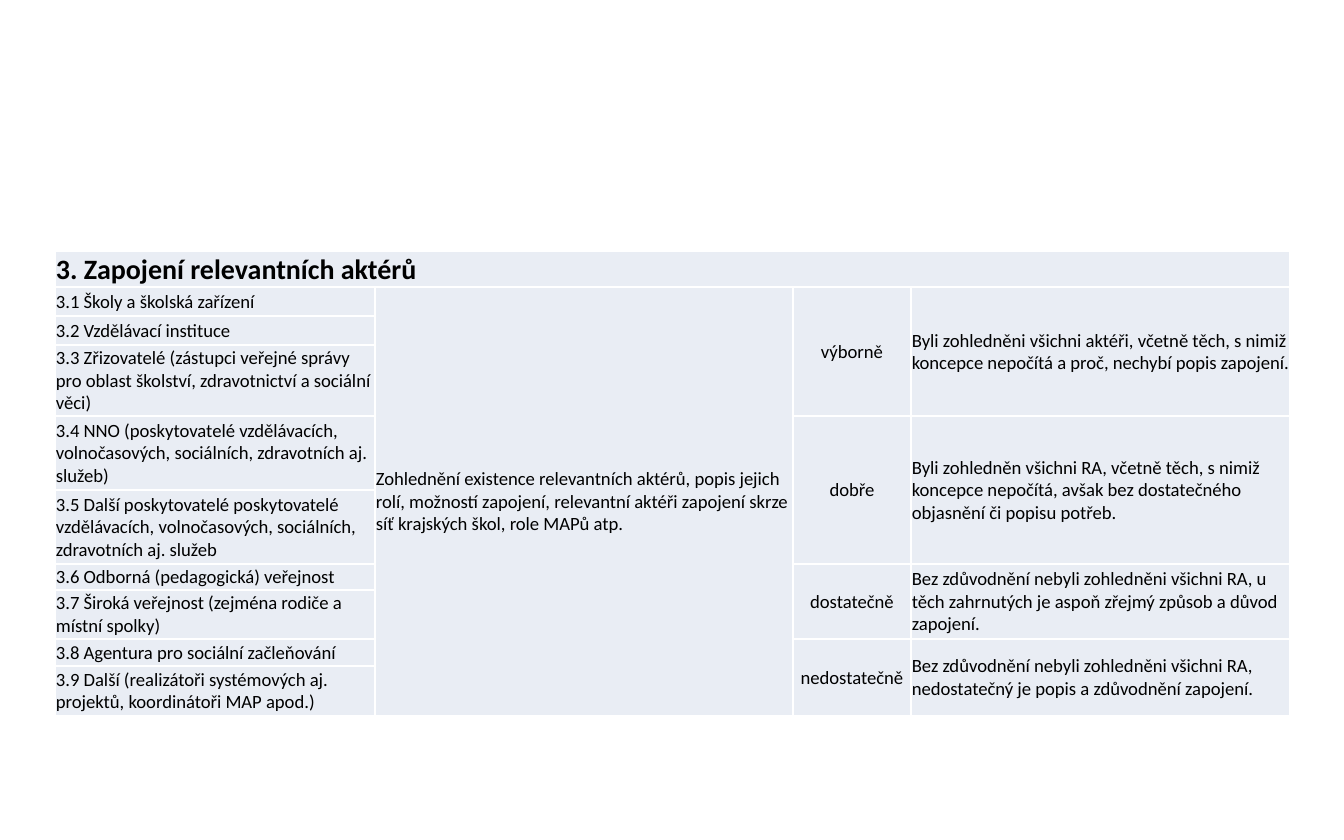
from lxml import etree
from pptx import Presentation
from pptx import util as u
from pptx.dml.color import RGBColor
from pptx.enum import text
from pptx.oxml.ns import qn

BLACK = RGBColor(0x00, 0x00, 0x00)
WHITE = RGBColor(0xFF, 0xFF, 0xFF)
PALE_BLUE = RGBColor(0xE9, 0xED, 0xF4)

WIDTH, HEIGHT = 1344, 840
EMU_PER_PX = u.Inches(10) / WIDTH

# Table content
HEADING = "3. Zapojení relevantních aktérů"
ACTORS = [
    "3.1 Školy a školská zařízení",
    "3.2 Vzdělávací instituce",
    "3.3 Zřizovatelé (zástupci veřejné správy pro oblast školství, zdravotnictví a sociální věci)",
    "3.4 NNO (poskytovatelé vzdělávacích, volnočasových, sociálních, zdravotních aj. služeb)",
    "3.5 Další poskytovatelé poskytovatelé vzdělávacích, volnočasových, sociálních, zdravotních aj. služeb",
    "3.6 Odborná (pedagogická) veřejnost",
    "3.7 Široká veřejnost (zejména rodiče a místní spolky)",
    "3.8 Agentura pro sociální začleňování",
    "3.9 Další (realizátoři systémových aj. projektů, koordinátoři MAP apod.)",
]
CRITERION = (
    "Zohlednění existence relevantních aktérů, popis jejich rolí, možností zapojení, "
    "relevantní aktéři zapojení skrze síť krajských škol, role MAPů atp."
)
# Grade, its description, number of actor rows it covers
GRADES = [
    ("výborně", "Byli zohledněni všichni aktéři, včetně těch, s nimiž koncepce "
     "nepočítá a proč, nechybí popis zapojení.", 3),
    ("dobře", "Byli zohledněn všichni RA, včetně těch, s nimiž koncepce nepočítá, "
     "avšak bez dostatečného objasnění či popisu potřeb.", 2),
    ("dostatečně", "Bez zdůvodnění nebyli zohledněni všichni RA, u těch zahrnutých "
     "je aspoň zřejmý způsob a důvod zapojení.", 2),
    ("nedostatečně", "Bez zdůvodnění nebyli zohledněni všichni RA, nedostatečný je "
     "popis a zdůvodnění zapojení.", 2),
]
COLUMN_WIDTHS = [320, 418, 118, 379]
ROW_HEIGHTS = [36, 29, 29, 71, 74, 74, 26, 49, 27, 50]


def px(length):
    return u.Emu(round(length * EMU_PER_PX))


def write(frame, content, size=10, bold=False, color=BLACK, font="Calibri",
          align=text.PP_ALIGN.LEFT):
    paragraph = frame.paragraphs[0]
    paragraph.alignment = align
    run = paragraph.add_run()
    run.text = content
    run.font.name = font
    run.font.size = u.Pt(size)
    run.font.bold = bold
    run.font.color.rgb = color


class Deck:
    fill = PALE_BLUE
    border = WHITE
    border_width = u.Pt(1)

    def __init__(self):
        self.presentation = Presentation()
        self.presentation.slide_width = px(WIDTH)
        self.presentation.slide_height = px(HEIGHT)
        self.slide = self.presentation.slides.add_slide(self.presentation.slide_layouts[6])

    def table(self, left, top, widths, heights):
        grid = self.slide.shapes.add_table(
            len(heights), len(widths), px(left), px(top), px(sum(widths)), px(sum(heights))
        ).table
        for column, width in zip(grid.columns, widths):
            column.width = px(width)
        for row, height in zip(grid.rows, heights):
            row.height = px(height)
        for cell in grid.iter_cells():
            self.style_cell(cell)
        return grid

    def style_cell(self, cell):
        cell.margin_left = cell.margin_right = cell.margin_top = px(1)
        cell.margin_bottom = 0
        cell.vertical_anchor = text.MSO_ANCHOR.MIDDLE
        properties = cell._tc.get_or_add_tcPr()
        for side in ("a:lnL", "a:lnR", "a:lnT", "a:lnB"):
            line = etree.SubElement(properties, qn(side), w=str(self.border_width))
            solid = etree.SubElement(line, qn("a:solidFill"))
            etree.SubElement(solid, qn("a:srgbClr"), val=str(self.border))
        cell.fill.solid()
        cell.fill.fore_color.rgb = self.fill

    def cell(self, grid, row, column, content, rows=1, columns=1, **style):
        origin = grid.cell(row, column)
        if rows * columns > 1:
            origin.merge(grid.cell(row + rows - 1, column + columns - 1))
        write(origin.text_frame, content, **style)


def main():
    deck = Deck()
    criteria = deck.table(55, 251, COLUMN_WIDTHS, ROW_HEIGHTS)

    # Heading across the full width
    deck.cell(criteria, 0, 0, HEADING, columns=len(COLUMN_WIDTHS), size=15, bold=True)

    # Actors and the shared criterion
    for row, actor in enumerate(ACTORS, start=1):
        deck.cell(criteria, row, 0, actor)
    deck.cell(criteria, 1, 1, CRITERION, rows=len(ACTORS))

    # Grades with their descriptions
    row = 1
    for grade, description, covered in GRADES:
        deck.cell(criteria, row, 2, grade, rows=covered, align=text.PP_ALIGN.CENTER)
        deck.cell(criteria, row, 3, description, rows=covered)
        row += covered

    deck.presentation.save("out.pptx")


if __name__ == "__main__":
    main()
